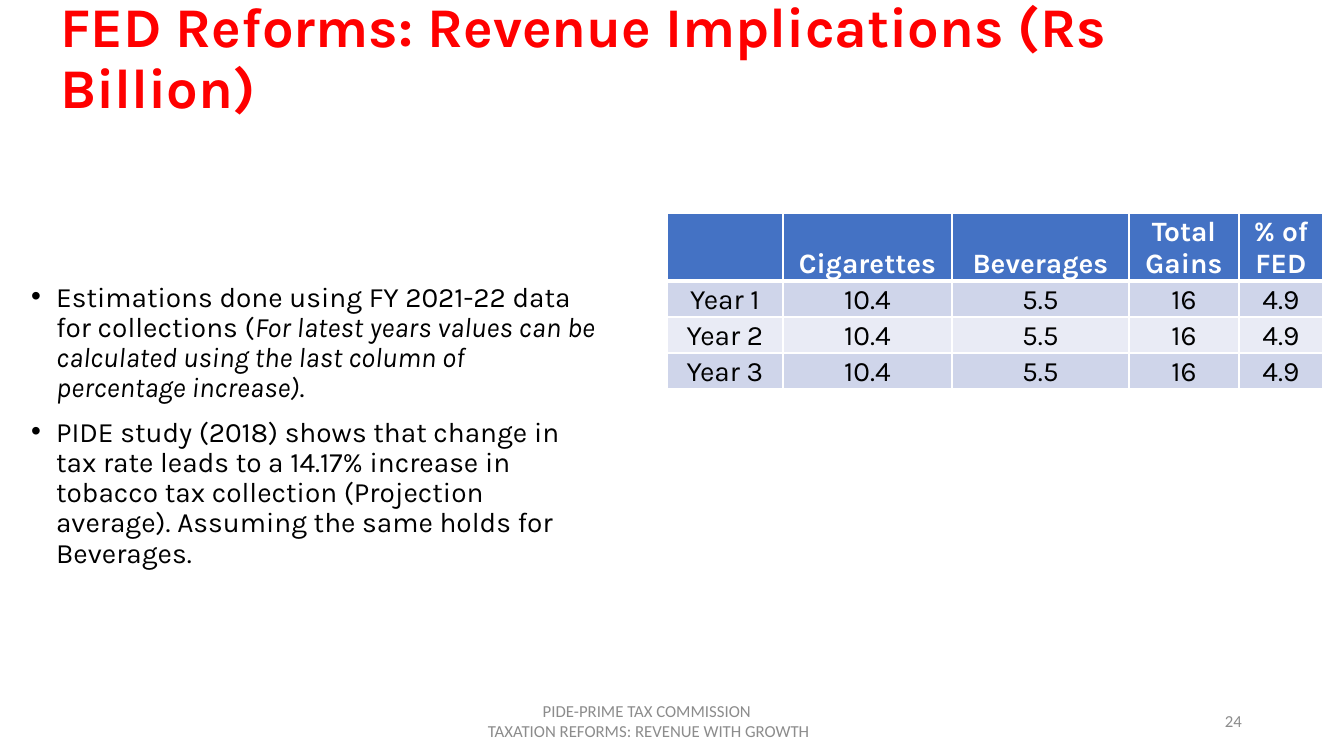
from dataclasses import dataclass

from lxml import etree
from pptx import Presentation
from pptx import util as u
from pptx.dml.color import RGBColor
from pptx.enum import text as t
from pptx.oxml import ns

TITLE = "FED Reforms: Revenue Implications (Rs Billion)"
# Each bullet is a list of (text, italic) runs.
BULLETS = [
    [
        ("Estimations done using FY 2021-22 data for collections (", False),
        ("For latest years values can be calculated using the last column of "
         "percentage increase)", True),
        (".", False),
    ],
    [
        ("PIDE study (2018) shows that change in tax rate leads to a 14.17% increase in "
         "tobacco tax collection (Projection average). Assuming the same holds for "
         "Beverages.", False),
    ],
]
REVENUE = [
    ("", "Cigarettes", "Beverages", "Total Gains", "% of FED"),
    ("Year 1", "10.4", "5.5", "16", "4.9"),
    ("Year 2", "10.4", "5.5", "16", "4.9"),
    ("Year 3", "10.4", "5.5", "16", "4.9"),
]
FOOTER = ["PIDE-PRIME TAX COMMISSION", " TAXATION REFORMS: REVENUE WITH GROWTH"]
SLIDE_NUMBER = "24"

# Lengths in px; boxes are left, top, width, height.
SLIDE_SIZE = (1344, 756)
TITLE_BOX = (50, -14, 1159, 148)
BODY_BOX = (21, 168, 585, 516)
FOOTER_BOX = (420, 701, 454, 40)
NUMBER_BOX = (950, 701, 302, 40)
TABLE_CORNER = (667, 213)
COLUMN_WIDTHS = (116, 169, 177, 110, 84)
HEADER_HEIGHT, ROW_HEIGHT = 68, 36
BULLET_INDENT = 25
CELL_MARGIN = 1


@dataclass(frozen=True)
class Theme:
    font: str = "Karla"
    footer_font: str = "Calibri"
    title_size: int = 40
    text_size: int = 20
    footer_size: int = 12
    title: str = "FF0000"
    text: str = "000000"
    footer: str = "8C8C8C"
    white: str = "FFFFFF"
    header: str = "4472C4"
    bands: tuple = ("CFD5EA", "E9EBF5")


THEME = Theme()


def px(length):
    return u.Emu(round(length * 914400 / 100.8))


def place(shape, box):
    shape.left, shape.top, shape.width, shape.height = map(px, box)


def add_run(paragraph, words, size, color, font=THEME.font, bold=False, italic=False):
    run = paragraph.add_run()
    run.text = words
    run.font.name, run.font.size = font, u.Pt(size)
    run.font.bold, run.font.italic = bold, italic
    run.font.color.rgb = RGBColor.from_string(color)


def prepare_frame(shape):
    """Wrap the text, keep its size and centre it vertically."""
    frame = shape.text_frame
    frame.word_wrap = True
    frame.auto_size = t.MSO_AUTO_SIZE.NONE
    frame.vertical_anchor = t.MSO_ANCHOR.MIDDLE
    return frame


def paragraphs_for(frame, items):
    """Yield one paragraph of the frame with each item."""
    for index, item in enumerate(items):
        yield (frame.add_paragraph() if index else frame.paragraphs[0]), item


def add_title(slide):
    place(slide.shapes.title, TITLE_BOX)
    paragraph = prepare_frame(slide.shapes.title).paragraphs[0]
    paragraph.alignment = t.PP_ALIGN.LEFT
    paragraph.line_spacing = 0.9
    add_run(paragraph, TITLE, THEME.title_size, THEME.title, bold=True)


def add_bullets(slide):
    body = slide.placeholders[1]
    place(body, BODY_BOX)
    for paragraph, runs in paragraphs_for(prepare_frame(body), BULLETS):
        paragraph.line_spacing = 0.9
        paragraph.space_before = u.Pt(10)
        properties = paragraph._p.get_or_add_pPr()
        properties.set("marL", str(px(BULLET_INDENT)))
        properties.set("indent", str(-px(BULLET_INDENT)))
        for words, italic in runs:
            add_run(paragraph, words, THEME.text_size, THEME.text, italic=italic)


def add_small_text(slide, box, lines, alignment):
    frame = prepare_frame(slide.shapes.add_textbox(*map(px, box)))
    for paragraph, line in paragraphs_for(frame, lines):
        paragraph.alignment = alignment
        add_run(paragraph, line, THEME.footer_size, THEME.footer, THEME.footer_font)


def add_borders(cell, bottom_width):
    properties = cell._tc.get_or_add_tcPr()
    for side in "LRTB":
        line = etree.SubElement(properties, ns.qn(f"a:ln{side}"))
        line.set("w", str(u.Pt(bottom_width if side == "B" else 1)))
        fill = etree.SubElement(line, ns.qn("a:solidFill"))
        etree.SubElement(fill, ns.qn("a:srgbClr")).set("val", THEME.white)


def add_revenue_table(slide):
    heights = [HEADER_HEIGHT] + [ROW_HEIGHT] * (len(REVENUE) - 1)
    box = (*TABLE_CORNER, sum(COLUMN_WIDTHS), sum(heights))
    table = slide.shapes.add_table(len(heights), len(COLUMN_WIDTHS), *map(px, box)).table
    for column, width in zip(table.columns, COLUMN_WIDTHS):
        column.width = px(width)
    for index, (row, height, values) in enumerate(zip(table.rows, heights, REVENUE)):
        row.height = px(height)
        is_header = index == 0
        fill = THEME.header if is_header else THEME.bands[(index - 1) % 2]
        color = THEME.white if is_header else THEME.text
        for cell, value in zip(row.cells, values):
            add_borders(cell, 3 if is_header else 1)
            cell.fill.solid()
            cell.fill.fore_color.rgb = RGBColor.from_string(fill)
            cell.vertical_anchor = t.MSO_ANCHOR.BOTTOM
            cell.margin_left = cell.margin_right = cell.margin_top = px(CELL_MARGIN)
            cell.margin_bottom = 0
            paragraph = cell.text_frame.paragraphs[0]
            paragraph.alignment = t.PP_ALIGN.CENTER
            if value:
                add_run(paragraph, value, THEME.text_size, color, bold=is_header)


def main():
    presentation = Presentation()
    presentation.slide_width, presentation.slide_height = map(px, SLIDE_SIZE)
    slide = presentation.slides.add_slide(presentation.slide_layouts[1])
    add_revenue_table(slide)
    add_small_text(slide, NUMBER_BOX, [SLIDE_NUMBER], t.PP_ALIGN.RIGHT)
    add_small_text(slide, FOOTER_BOX, FOOTER, t.PP_ALIGN.CENTER)
    add_bullets(slide)
    add_title(slide)
    presentation.save("out.pptx")


if __name__ == "__main__":
    main()
